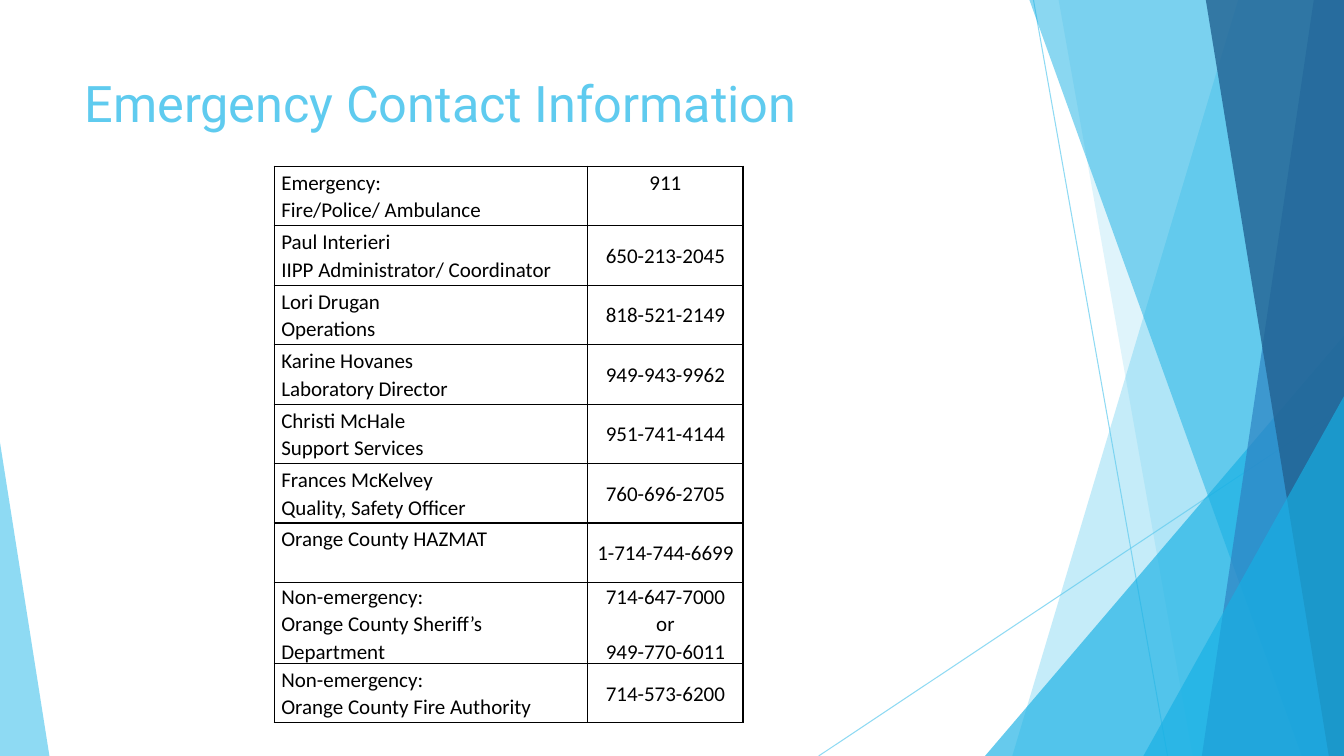
import pptx
import pptx.util
import pptx.oxml
import pptx.oxml.ns
import pptx.enum.shapes
import pptx.enum.text
import pptx.dml.color
import lxml.etree

Inches = pptx.util.Inches
Pt = pptx.util.Pt
Align = pptx.enum.text.PP_ALIGN
Anchor = pptx.enum.text.MSO_ANCHOR
Shape = pptx.enum.shapes.MSO_SHAPE
qn = pptx.oxml.ns.qn


def paint(fill, color, alpha=100):
    fill.solid()
    fill.fore_color.rgb = pptx.dml.color.RGBColor.from_string(color)
    if alpha < 100:
        node = fill._xPr.xpath(".//a:srgbClr")[0]
        lxml.etree.SubElement(node, qn("a:alpha")).set("val", str(alpha * 1000))


def write(frame, text, font="Calibri", size=15, color="000000", align=Align.LEFT, space=1.0):
    frame.word_wrap = True
    frame.text = text
    for para in frame.paragraphs:
        para.alignment = align
        para.line_spacing = space
        for run in para.runs:
            run.font.name = font
            run.font.size = Pt(size)
            paint(run.font.fill, color)


deck = pptx.Presentation()
deck.slide_width = Inches(13.33)
deck.slide_height = Inches(7.5)
slide = deck.slides.add_slide(deck.slide_layouts[6])
shapes = slide.shapes

for ends in [(10.25, 0, 11.58, 7.5), (13.33, 4.03, 8.12, 7.5)]:
    line = shapes.add_connector(
        pptx.enum.shapes.MSO_CONNECTOR.STRAIGHT, *[Inches(end) for end in ends])
    line.line.width = Pt(0.75)
    paint(line.line.fill, "5FCBEF", 70)
    lxml.etree.SubElement(line._element.spPr, qn("a:effectLst"))

# Bands give the top and bottom of the left edge; triangles give box and apex.
facets = [
    ("5FCBEF", 36, (12.28, 10.04)),
    ("5FCBEF", 20, (10.5, 11.83)),
    ("17B0E4", 66, (9.77, 3.33, 3.56, 4.17, 1)),
    ("17B0E4", 50, (10.21, 12.91)),
    ("2E83C3", 70, (13.03, 11.92)),
    ("226292", 80, (11.96, 13.18)),
    ("17B0E4", 66, (11.34, 3.93, 1.99, 3.57, 1)),
    ("5FCBEF", 70, (0, 4.39, 0.49, 3.11, 0)),
]
for color, alpha, form in facets:
    if len(form) == 2:
        top, low = form
        pen = shapes.build_freeform(Inches(top), 0)
        pen.add_line_segments(
            [(Inches(x), Inches(y)) for x, y in [(13.33, 0), (13.33, 7.5), (low, 7.5)]])
        facet = pen.convert_to_shape()
    else:
        facet = shapes.add_shape(
            Shape.ISOSCELES_TRIANGLE, *[Inches(side) for side in form[:4]])
        facet.adjustments[0] = form[4]
    facet.shadow.inherit = False
    facet.line.fill.background()
    paint(facet.fill, color, alpha)

title = shapes.add_textbox(Inches(0.74), Inches(0.67), Inches(9.4), Inches(1.44))
write(title.text_frame, "Emergency Contact Information",
      font="Roboto", size=36, color="5FCBEF")

people = [
    ("Emergency:\nFire/Police/ Ambulance", "911"),
    ("Paul Interieri\nIIPP Administrator/ Coordinator", "650-213-2045"),
    ("Lori Drugan\nOperations", "818-521-2149"),
    ("Karine Hovanes\nLaboratory Director", "949-943-9962"),
    ("Christi McHale\nSupport Services", "951-741-4144"),
    ("Frances McKelvey\nQuality, Safety Officer", "760-696-2705"),
    ("Orange County HAZMAT", "1-714-744-6699"),
    ("Non-emergency:\nOrange County Sheriff’s Department", "714-647-7000 or\n949-770-6011"),
    ("Non-emergency:\nOrange County Fire Authority", "714-573-6200"),
]
raised = ["911", "Orange County HAZMAT"]
table = shapes.add_table(
    len(people), 2, Inches(2.72), Inches(1.65), Inches(4.65), Inches(5.49)).table
table.first_row = False
table.horz_banding = False
table.columns[0].width = Inches(3.11)
table.columns[1].width = Inches(1.54)

for row, pair in zip(table.rows, people):
    row.height = Inches(0.77 if "Sheriff" in pair[0] else 0.59)
    for cell, text, align in zip(row.cells, pair, [Align.LEFT, Align.CENTER]):
        write(cell.text_frame, text, align=align, space=1.07)
        cell.margin_left = cell.margin_right = Inches(0.07)
        cell.margin_top = Inches(0.02 if text in raised else 0)
        cell.margin_bottom = 0
        cell.vertical_anchor = Anchor.TOP if text in raised else Anchor.MIDDLE
        props = cell._tc.get_or_add_tcPr()
        for side in ["lnL", "lnR", "lnT", "lnB"]:
            edge = lxml.etree.SubElement(props, qn("a:" + side), w=str(Pt(1)))
            ink = lxml.etree.SubElement(edge, qn("a:solidFill"))
            lxml.etree.SubElement(ink, qn("a:srgbClr"), val="000000")
        cell.fill.background()

deck.save("out.pptx")
